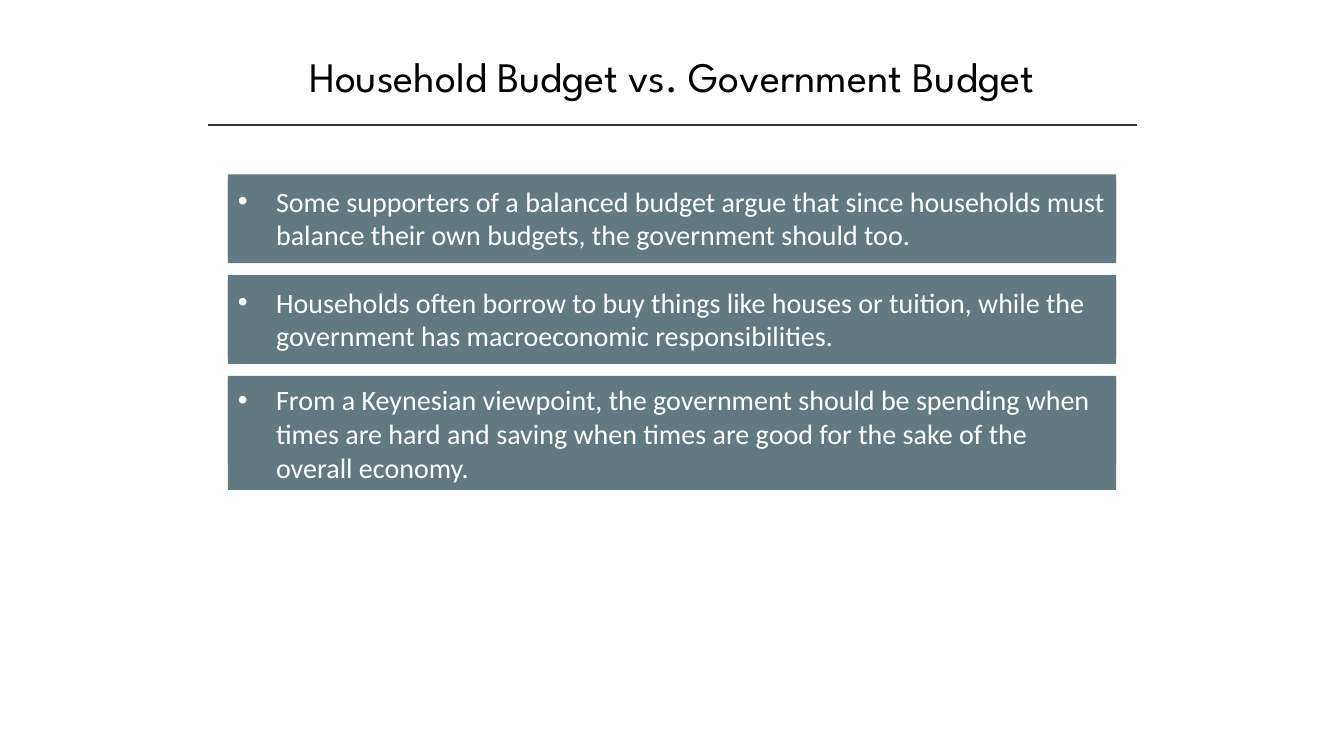
from lxml import etree
from pptx import Presentation
from pptx.dml.color import RGBColor
from pptx.enum.shapes import MSO_CONNECTOR, MSO_SHAPE
from pptx.enum.text import MSO_ANCHOR, MSO_AUTO_SIZE, PP_ALIGN
from pptx.oxml.ns import qn
from pptx.util import Inches, Pt

COLORS = {"title": "000000", "rule": "323542", "card": "627981", "text": "FFFFFF"}
LEFT, TOP, WIDTH, HEIGHT, STEP = 2.26, 1.73, 8.81, 0.88, 1.0

# text, offset of the text panel from the card top, panel height
POINTS = [
    ("Some supporters of a balanced budget argue that since households must "
     "balance their own budgets, the government should too.", 0.05, 0.77),
    ("Households often borrow to buy things like houses or tuition, while the "
     "government has macroeconomic responsibilities.", 0.05, 0.77),
    ("From a Keynesian viewpoint, the government should be spending when times "
     "are hard and saving when times are good for the sake of the overall "
     "economy.", 0.02, 1.11),
]


def add_panel(group, top, height):
    sp = group.shapes.add_shape(MSO_SHAPE.RECTANGLE, Inches(LEFT), Inches(top),
                                Inches(WIDTH), Inches(height))
    sp.shadow.inherit = False
    sp.fill.solid()
    sp.fill.fore_color.rgb = RGBColor.from_string(COLORS["card"])
    sp.line.fill.background()
    return sp


def set_font(p, name, size, color):
    p.font.name = name
    p.font.size = Pt(size)
    p.font.color.rgb = RGBColor.from_string(COLORS[color])


prs = Presentation()
prs.slide_width, prs.slide_height = Inches(13.33), Inches(7.5)
s = prs.slides.add_slide(prs.slide_layouts[5])

# Title
title = s.shapes.title
title.left, title.top = Inches(1.86), Inches(0.45)
title.width, title.height = Inches(9.61), Inches(0.61)
tf = title.text_frame
tf.text = "Household Budget vs. Government Budget"
tf.vertical_anchor = MSO_ANCHOR.TOP
tf.auto_size = MSO_AUTO_SIZE.SHAPE_TO_FIT_TEXT
p = tf.paragraphs[0]
p.alignment = PP_ALIGN.CENTER
set_font(p, "League Spartan", 30, "title")

# Rule under the title
rule = s.shapes.add_connector(MSO_CONNECTOR.STRAIGHT, Inches(2.06), Inches(1.24),
                              Inches(11.28), Inches(1.24))
rule.line.color.rgb = RGBColor.from_string(COLORS["rule"])
rule.line.width = Pt(1)
etree.SubElement(rule._element.spPr, qn("a:effectLst"))

# Bulleted cards
for i, (text, offset, height) in enumerate(POINTS):
    top = TOP + i * STEP
    group = s.shapes.add_group_shape()
    add_panel(group, top, HEIGHT)
    tf = add_panel(group, top + offset, height).text_frame
    tf.text = text
    tf.word_wrap = True
    tf.vertical_anchor = MSO_ANCHOR.TOP
    tf.auto_size = MSO_AUTO_SIZE.SHAPE_TO_FIT_TEXT
    p = tf.paragraphs[0]
    p.alignment = PP_ALIGN.LEFT
    set_font(p, "Calibri", 20, "text")
    pPr = p._p.get_or_add_pPr()
    pPr.set("marL", str(Inches(0.38)))
    pPr.set("indent", str(-Inches(0.38)))
    bullet_font = etree.Element(qn("a:buFont"), typeface="Arial")
    bullet = etree.Element(qn("a:buChar"), char="•")
    pPr.insert(0, bullet_font)
    pPr.insert(1, bullet)

prs.save("out.pptx")
